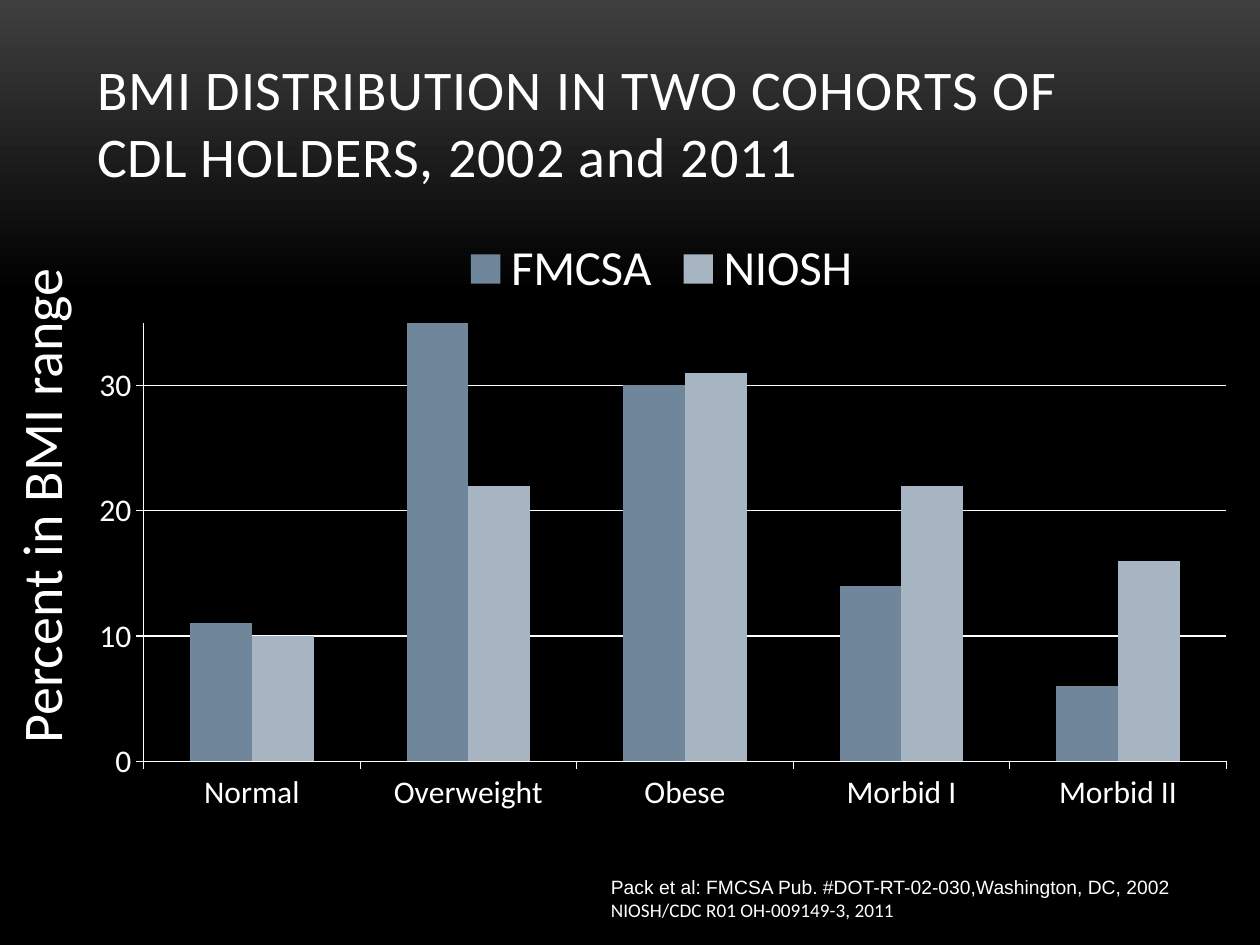
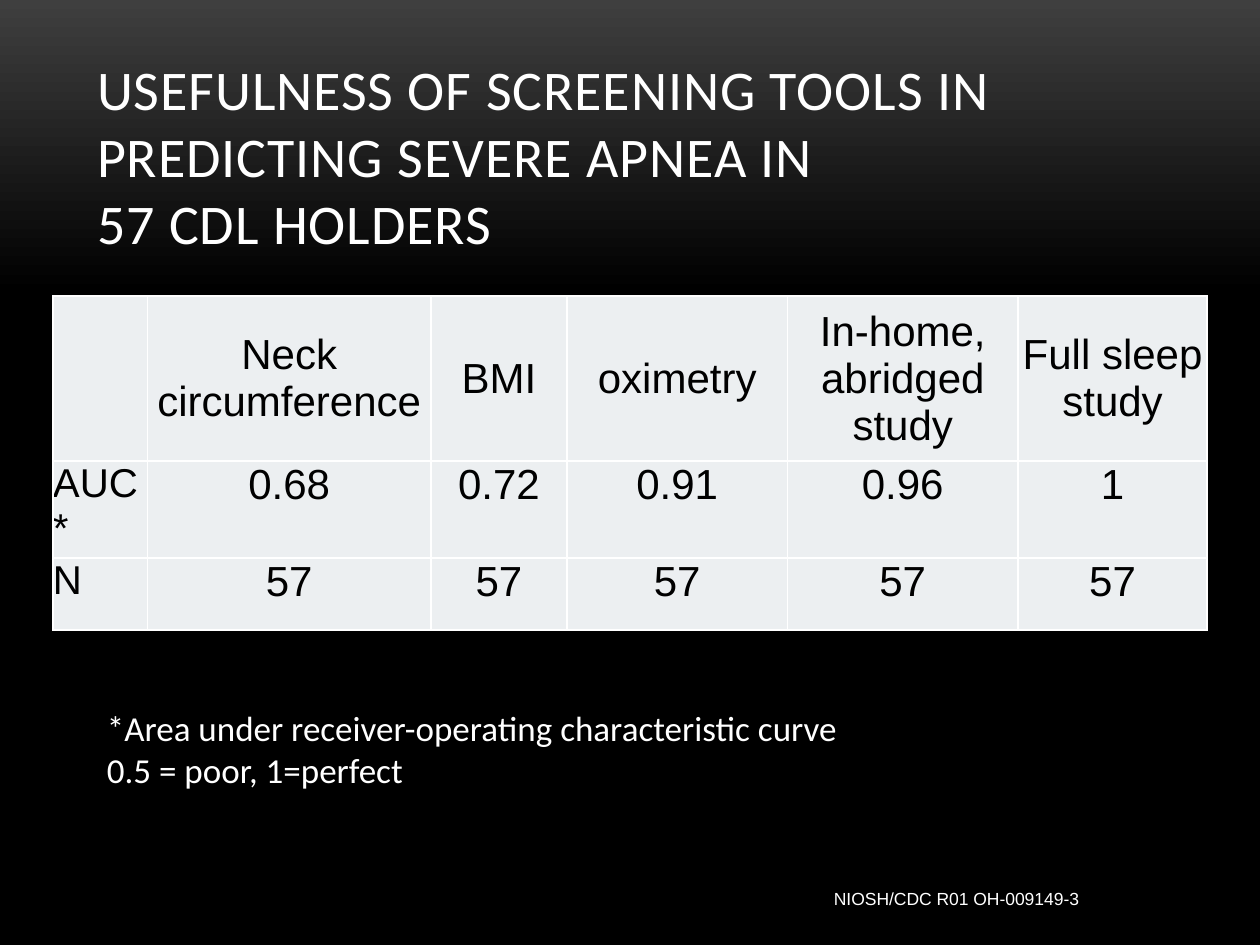
from dataclasses import dataclass

from lxml import etree
from pptx import Presentation
from pptx.chart.data import CategoryChartData
from pptx.dml.color import RGBColor
from pptx.enum.chart import XL_CHART_TYPE, XL_LEGEND_POSITION, XL_TICK_MARK
from pptx.enum.text import MSO_ANCHOR, MSO_AUTO_SIZE, PP_ALIGN
from pptx.oxml import parse_xml
from pptx.oxml.ns import nsdecls, qn
from pptx.util import Inches, Pt

COLUMNS = XL_CHART_TYPE.COLUMN_CLUSTERED
TOP = XL_LEGEND_POSITION.TOP
OUT, NONE = XL_TICK_MARK.OUTSIDE, XL_TICK_MARK.NONE
MIDDLE, BOTTOM = MSO_ANCHOR.MIDDLE, MSO_ANCHOR.BOTTOM
ROW_TOP = MSO_ANCHOR.TOP
GROW, FIXED = MSO_AUTO_SIZE.SHAPE_TO_FIT_TEXT, MSO_AUTO_SIZE.NONE
LEFT, CENTER = PP_ALIGN.LEFT, PP_ALIGN.CENTER


@dataclass(frozen=True)
class Theme:
    white: str = "FFFFFF"
    black: str = "000000"
    glow: str = "3F3F3F"
    cell: str = "ECEFF1"
    bars: tuple = ("70869A", "A7B4C2")
    main: str = "Calibri"
    plain: str = "Arial"
    title: int = 32
    legend: int = 28
    head: int = 24
    label: int = 23
    note: int = 20
    axis: int = 18
    source: int = 11
    small: int = 10


T = Theme()


@dataclass(frozen=True)
class Line:
    text: str
    size: int
    face: str = T.main


@dataclass(frozen=True)
class Box:
    left: float
    top: float
    width: float
    height: float
    lines: tuple
    turn: int = 0
    wrap: bool = True


def place(shape, left: float, top: float, width: float, height: float) -> None:
    shape.left, shape.top = Inches(left), Inches(top)
    shape.width, shape.height = Inches(width), Inches(height)


def style(font, size: int, face: str = T.main, color: str = T.white) -> None:
    font.size, font.name = Pt(size), face
    font.color.rgb = RGBColor.from_string(color)


def add_run(para, line: Line, color: str = T.white):
    run = para.add_run()
    run.text = line.text
    style(run.font, line.size, line.face, color)
    return run


def add_box(slide, box: Box) -> None:
    shape = slide.shapes.add_textbox(Inches(box.left), Inches(box.top),
                                     Inches(box.width), Inches(box.height))
    shape.rotation = box.turn
    frame = shape.text_frame
    frame.word_wrap = box.wrap
    frame.auto_size = GROW
    for i, line in enumerate(box.lines):
        para = frame.add_paragraph() if i else frame.paragraphs[0]
        add_run(para, line)


# Shared backdrop and title
def paint(master) -> None:
    fill = master.background.fill
    fill.gradient()
    fill.gradient_angle = 270
    stops = master.element.find(".//" + qn("a:gsLst"))
    for stop in list(stops):
        stops.remove(stop)
    for pos, color in ((0, T.glow), (31, T.black), (100, T.black)):
        stop = etree.SubElement(stops, qn("a:gs"), pos=str(pos * 1000))
        etree.SubElement(stop, qn("a:srgbClr"), val=color)


def add_slide(deck, top: float, rows: tuple):
    slide = deck.slides.add_slide(deck.slide_layouts.get_by_name("Title Only"))
    title = slide.shapes.title
    place(title, 0.67, top, 8.67, 1.25)
    frame = title.text_frame
    frame.auto_size, frame.word_wrap = FIXED, True
    frame.vertical_anchor = BOTTOM
    para = frame.paragraphs[0]
    para.alignment = LEFT
    for i, text in enumerate(rows):
        if i:
            para.add_line_break()
        run = add_run(para, Line(text, T.title))
        run.font._element.set("spc", "50")
    return slide


# Chart of both cohorts
def add_bars(slide, cats: tuple, groups: dict) -> None:
    data = CategoryChartData()
    data.categories = cats
    for name, vals in groups.items():
        data.add_series(name, vals)
    chart = slide.shapes.add_chart(COLUMNS, Inches(0.58), Inches(1.75),
                                   Inches(9.34), Inches(4.77), data).chart
    style(chart.font, T.axis)
    chart.has_title = False
    chart.has_legend = True
    chart.legend.position = TOP
    chart.legend.include_in_layout = False
    style(chart.legend.font, T.legend)

    plot = chart.plots[0]
    plot.gap_width, plot.overlap = 150, 0
    plot.vary_by_categories = False
    for series, color in zip(plot.series, T.bars):
        series.format.fill.solid()
        series.format.fill.fore_color.rgb = RGBColor.from_string(color)

    scale = chart.value_axis
    scale.minimum_scale, scale.maximum_scale = 0, 35
    scale.major_unit = 10
    scale.has_major_gridlines = True
    for axis in (chart.category_axis, scale):
        axis.major_tick_mark, axis.minor_tick_mark = OUT, NONE
        style(axis.tick_labels.font, T.axis)
    for part in (chart.category_axis, scale, scale.major_gridlines):
        part.format.line.width = Pt(0.75)
        part.format.line.color.rgb = RGBColor.from_string(T.white)

    # Fixed inner plot area
    area = chart._chartSpace.find(".//" + qn("c:plotArea"))
    old = area.find(qn("c:layout"))
    if old is not None:
        area.remove(old)
    spots = {"x": 0.06, "y": 0.17, "w": 0.92, "h": 0.73}
    modes = "".join(f'<c:{key}Mode val="edge"/>' for key in "xy")
    sizes = "".join(f'<c:{key} val="{val}"/>' for key, val in spots.items())
    area.insert(0, parse_xml(
        f'<c:layout {nsdecls("c")}><c:manualLayout>'
        f'<c:layoutTarget val="inner"/>{modes}{sizes}'
        f'</c:manualLayout></c:layout>'))


# Table of screening tools
def edge(cell) -> None:
    props = cell._tc.get_or_add_tcPr()
    for side in "LRTB":
        line = etree.SubElement(props, qn(f"a:ln{side}"), w=str(Pt(1)))
        fill = etree.SubElement(line, qn("a:solidFill"))
        etree.SubElement(fill, qn("a:srgbClr"), val=T.white)


def add_grid(slide, cols: tuple, rows: tuple, texts: tuple) -> None:
    grid = slide.shapes.add_table(len(rows), len(cols), Inches(0.42), Inches(2.35),
                                  Inches(sum(cols)), Inches(sum(rows))).table
    grid.first_row = grid.horz_banding = False
    for col, width in zip(grid.columns, cols):
        col.width = Inches(width)
    for row, height in zip(grid.rows, rows):
        row.height = Inches(height)
    for r, line in enumerate(texts):
        for c, text in enumerate(line):
            cell = grid.cell(r, c)
            edge(cell)
            cell.fill.solid()
            cell.fill.fore_color.rgb = RGBColor.from_string(T.cell)
            cell.margin_left = cell.margin_right = 0
            cell.margin_top = cell.margin_bottom = 0
            cell.vertical_anchor = ROW_TOP if r else MIDDLE
            para = cell.text_frame.paragraphs[0]
            para.alignment = CENTER if c else LEFT
            if text:
                size = T.head if c else T.label
                add_run(para, Line(text, size, T.plain), T.black)


def main() -> None:
    deck = Presentation()
    deck.slide_width, deck.slide_height = Inches(10), Inches(7.5)
    paint(deck.slide_master)

    # Slide 1: BMI distribution
    slide = add_slide(deck, 0.3, ("BMI DISTRIBUTION IN TWO COHORTS OF ",
                                  "CDL HOLDERS, 2002 and 2011"))
    add_bars(slide, ("Normal", "Overweight", "Obese", "Morbid I", "Morbid II"),
             {"FMCSA": (11, 38, 30, 14, 6), "NIOSH": (10, 22, 31, 22, 16)})
    add_box(slide, Box(-1.79, 3.57, 4.22, 0.64,
                       (Line("Percent in BMI range", T.title),), turn=270))
    add_box(slide, Box(4.75, 6.9, 4.92, 0.47, (
        Line("Pack et al: FMCSA Pub. #DOT-RT-02-030,Washington, DC, 2002",
             T.source, T.plain),
        Line("NIOSH/CDC R01 OH-009149-3, 2011", T.source))))

    # Slide 2: screening tools
    slide = add_slide(deck, 0.83, (
        "USEFULNESS OF SCREENING TOOLS IN PREDICTING SEVERE APNEA IN ",
        "57 CDL HOLDERS"))
    add_grid(slide, (0.75, 2.25, 1.08, 1.75, 1.83, 1.5), (1.31, 0.77, 0.57), (
        ("", "Neck circumference", "BMI", "oximetry",
         "In-home, abridged study", "Full sleep study"),
        ("AUC*", "0.68", "0.72", "0.91", "0.96", "1"),
        ("N",) + ("57",) * 5))
    add_box(slide, Box(6.52, 7, 2.24, 0.27, (
        Line("NIOSH/CDC R01 OH-009149-3", T.small, T.plain),), wrap=False))
    add_box(slide, Box(0.75, 5.56, 6.07, 0.77, (
        Line("*Area under receiver-operating characteristic curve", T.note),
        Line("0.5 = poor, 1=perfect", T.note)), wrap=False))

    deck.save("out.pptx")


if __name__ == "__main__":
    main()
